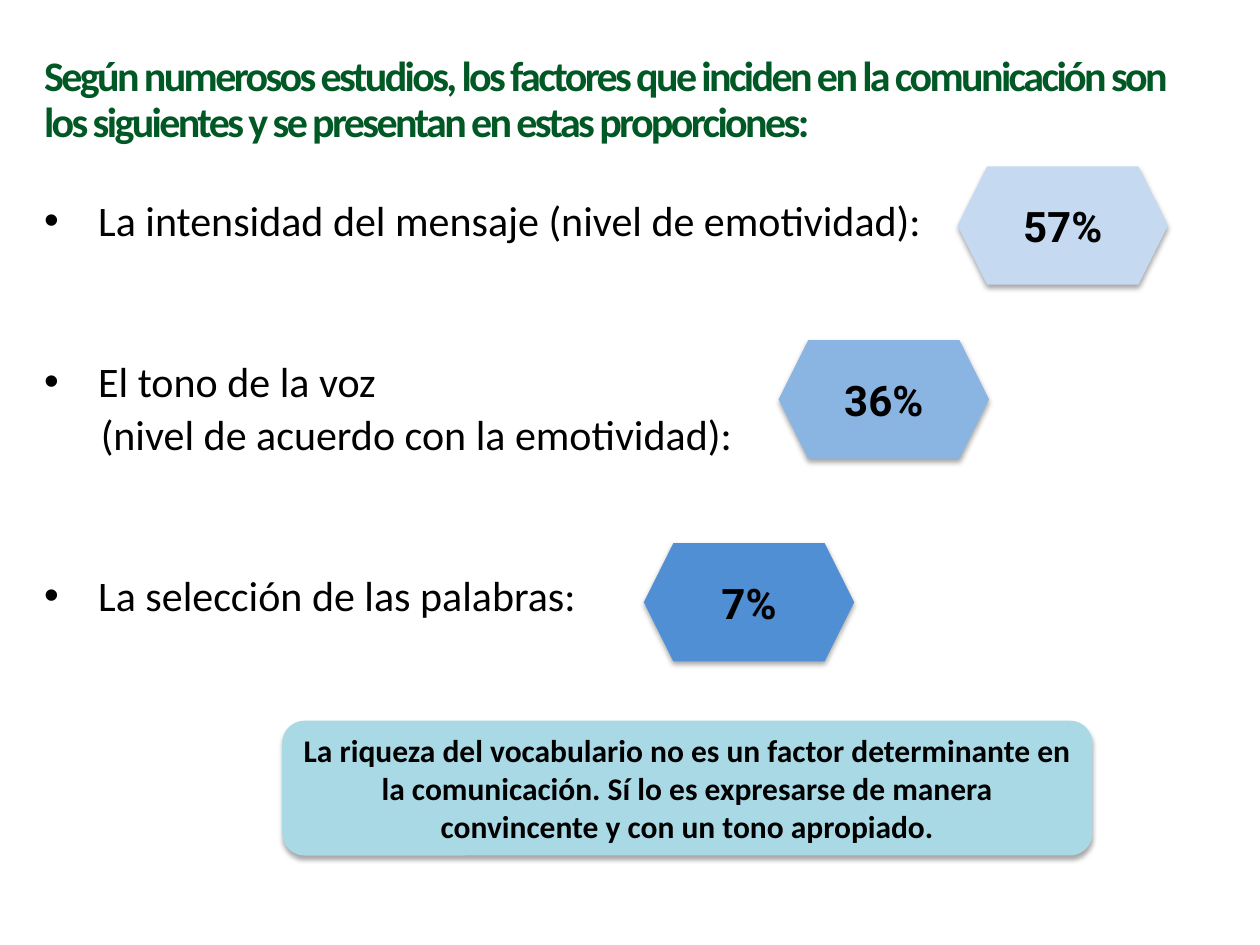
from lxml.etree import SubElement
from pptx import Presentation
from pptx.dml.color import RGBColor
from pptx.enum.shapes import MSO_SHAPE
from pptx.enum.text import MSO_ANCHOR, MSO_AUTO_SIZE, PP_ALIGN
from pptx.oxml.ns import qn
from pptx.util import Inches, Pt

COLORS = {
    "title": "005825",
    "text": "000000",
    "intensity": "C5DAF1",
    "tone": "8AB4E2",
    "words": "508FD4",
    "conclusion": "A8D9E5",
}

presentation = Presentation()
presentation.slide_width = Inches(10)
presentation.slide_height = Inches(7.5)
column = presentation.slide_width / 100
row = presentation.slide_height / 100
slide = presentation.slides.add_slide(presentation.slide_layouts[5])


def add_run(paragraph, text, size, color, bold=False, font="Calibri"):
    run = paragraph.add_run()
    run.text = text
    run.font.name = font
    run.font.size = Pt(size)
    run.font.bold = bold
    run.font.color.rgb = RGBColor.from_string(COLORS[color])
    return run


def add_panel(kind, left, top, width, height, color, text, size, font):
    shape = slide.shapes.add_shape(
        kind, int(left * column), int(top * row), int(width * column), int(height * row)
    )
    shape.fill.solid()
    shape.fill.fore_color.rgb = RGBColor.from_string(COLORS[color])
    shape.line.fill.background()
    shape.shadow.inherit = False
    effects = shape.element.spPr.find(qn("a:effectLst"))
    shadow = SubElement(effects, qn("a:outerShdw"), blurRad=str(Pt(3.1)),
                        dist=str(Pt(1.8)), dir="5400000", rotWithShape="0")
    shade = SubElement(shadow, qn("a:srgbClr"), val=COLORS["text"])
    SubElement(shade, qn("a:alpha"), val="35000")
    frame = shape.text_frame
    frame.word_wrap = True
    frame.vertical_anchor = MSO_ANCHOR.MIDDLE
    paragraph = frame.paragraphs[0]
    paragraph.alignment = PP_ALIGN.CENTER
    add_run(paragraph, text, size, "text", True, font)


title = slide.shapes.title
title.left, title.top = int(3.5 * column), int(5.87 * row)
title.width, title.height = int(91.7 * column), int(14.53 * row)
factors = slide.shapes.add_textbox(
    int(3.5 * column), int(21.2 * row), int(91.7 * column), int(70 * row)
)
for shape in (title, factors):
    frame = shape.text_frame
    frame.margin_left = frame.margin_right = frame.margin_top = frame.margin_bottom = 0
    frame.word_wrap = True
    frame.auto_size = MSO_AUTO_SIZE.NONE
    frame.vertical_anchor = MSO_ANCHOR.TOP

heading = title.text_frame.paragraphs[0]
heading.alignment = PP_ALIGN.LEFT
heading.line_spacing = 0.9
heading_run = add_run(
    heading,
    "Según numerosos estudios, los factores que inciden en la comunicación son "
    "los siguientes y se presentan en estas proporciones:",
    24, "title", True,
)
heading_run.font._element.set("spc", "-150")

factor_lines = [
    ("La intensidad del mensaje (nivel de emotividad):", True, 0),
    ("El tono de la voz", True, 66),
    ("(nivel de acuerdo con la emotividad):", False, 4.5),
    ("La selección de las palabras:", True, 66),
]
for index, (text, bulleted, space) in enumerate(factor_lines):
    frame = factors.text_frame
    paragraph = frame.add_paragraph() if index else frame.paragraphs[0]
    paragraph.alignment = PP_ALIGN.JUSTIFY
    paragraph.line_spacing = 0.9
    paragraph.space_before = Pt(space)
    properties = paragraph._p.get_or_add_pPr()
    properties.set("marL", str(Inches(0.43 if bulleted else 0.45)))
    if bulleted:
        properties.set("indent", str(Inches(-0.43)))
        SubElement(properties, qn("a:buFont"), typeface="Arial")
        SubElement(properties, qn("a:buChar"), char="•")
    add_run(paragraph, text, 24, "text")

shares = [
    (76, 17.6, "intensity", "57%"),
    (61.8, 36, "tone", "36%"),
    (51.1, 57.47, "words", "7%"),
]
for left, top, color, text in shares:
    add_panel(MSO_SHAPE.HEXAGON, left, top, 16.7, 12.53, color, text, 24, "Roboto")

add_panel(
    MSO_SHAPE.ROUNDED_RECTANGLE, 22.4, 76.27, 64.3, 14.27, "conclusion",
    "La riqueza del vocabulario no es un factor determinante en la comunicación. "
    "Sí lo es expresarse de manera convincente y con un tono apropiado.",
    18, "Calibri",
)

presentation.save("out.pptx")
